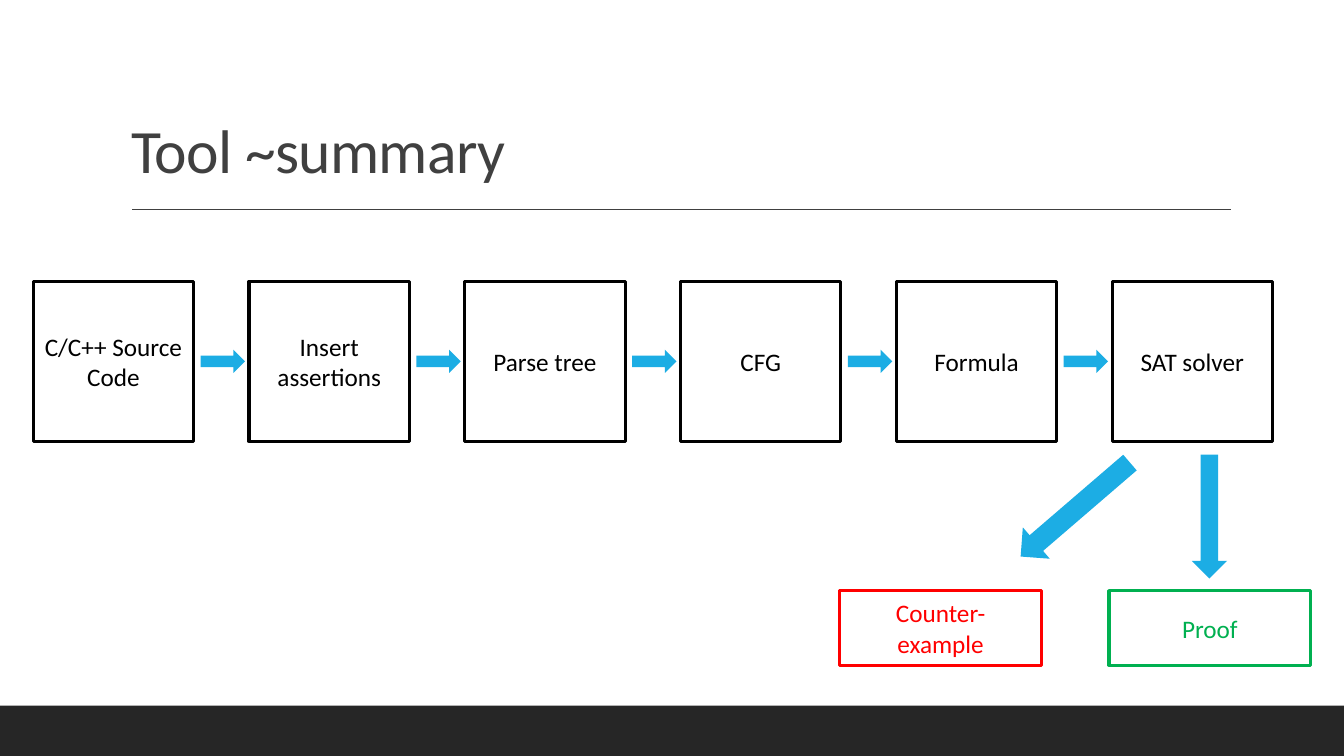
import dataclasses

import pptx
import pptx.dml.color
import pptx.enum.shapes
import pptx.enum.text
import pptx.oxml
import pptx.util
from pptx.util import Inches


@dataclasses.dataclass(frozen=True)
class Theme:
    font: str = "Calibri"
    title_size: float = 44
    body_size: float = 18
    outline_width: float = 2.25
    rule_width: float = 1
    ink: str = "000000"
    title: str = "404040"
    paper: str = "FFFFFF"
    footer: str = "262626"
    arrow: str = "1CADE4"
    failure: str = "FF0000"
    success: str = "00B050"


def color(value):
    return pptx.dml.color.RGBColor.from_string(value)


def write_text(shape, text, *, font, size, ink, align, anchor, line_spacing=1.0, tracking=None):
    frame = shape.text_frame
    frame.word_wrap = True
    frame.auto_size = pptx.enum.text.MSO_AUTO_SIZE.NONE
    frame.vertical_anchor = anchor
    frame.text = text
    for paragraph in frame.paragraphs:
        paragraph.alignment = align
        paragraph.line_spacing = line_spacing
        for run in paragraph.runs:
            run.font.name = font
            run.font.size = pptx.util.Pt(size)
            run.font.color.rgb = color(ink)
            if tracking is not None:
                run.font._element.set("spc", str(round(tracking * 100)))


class SlideBuilder:
    def __init__(self, slide, theme):
        self.slide = slide
        self.theme = theme

    def title(self, text, left, top, width, height):
        shape = self.slide.shapes.title
        shape.left, shape.top = Inches(left), Inches(top)
        shape.width, shape.height = Inches(width), Inches(height)
        write_text(
            shape, text, font=self.theme.font, size=self.theme.title_size,
            ink=self.theme.title, align=pptx.enum.text.PP_ALIGN.LEFT,
            anchor=pptx.enum.text.MSO_ANCHOR.BOTTOM, line_spacing=0.9, tracking=-0.5,
        )

    def rule(self, left, top, right):
        line = self.slide.shapes.add_connector(
            pptx.enum.shapes.MSO_CONNECTOR.STRAIGHT,
            Inches(left), Inches(top), Inches(right), Inches(top),
        )
        line.line.color.rgb = color(self.theme.title)
        line.line.width = pptx.util.Pt(self.theme.rule_width)
        properties = line._element.spPr
        properties.append(pptx.oxml.parse_xml(
            '<a:effectLst xmlns:a="http://schemas.openxmlformats.org/drawingml/2006/main"/>'
        ))

    def solid(self, kind, left, top, width, height, fill):
        shape = self.slide.shapes.add_shape(
            kind, Inches(left), Inches(top), Inches(width), Inches(height)
        )
        shape.shadow.inherit = False
        shape.fill.solid()
        shape.fill.fore_color.rgb = color(fill)
        shape.line.fill.background()
        return shape

    def band(self, left, top, width, height):
        self.solid(pptx.enum.shapes.MSO_SHAPE.RECTANGLE, left, top, width, height, self.theme.footer)

    def box(self, text, left, top, width, height, ink):
        shape = self.solid(
            pptx.enum.shapes.MSO_SHAPE.RECTANGLE, left, top, width, height, self.theme.paper
        )
        shape.line.color.rgb = color(ink)
        shape.line.width = pptx.util.Pt(self.theme.outline_width)
        write_text(
            shape, text, font=self.theme.font, size=self.theme.body_size, ink=ink,
            align=pptx.enum.text.PP_ALIGN.CENTER, anchor=pptx.enum.text.MSO_ANCHOR.MIDDLE,
        )

    def arrow(self, left, top, width, height, rotation=0):
        shape = self.solid(
            pptx.enum.shapes.MSO_SHAPE.RIGHT_ARROW, left, top, width, height, self.theme.arrow
        )
        shape.rotation = rotation


def main():
    presentation = pptx.Presentation()
    presentation.slide_width = Inches(13.33)
    presentation.slide_height = Inches(7.5)
    slide = presentation.slides.add_slide(presentation.slide_layouts[5])
    theme = Theme()
    builder = SlideBuilder(slide, theme)

    builder.band(0, 7, 13.33, 0.5)
    builder.rule(1.31, 2.08, 12.21)
    builder.title("Tool ~summary", 1.2, 0.31, 11, 1.59)

    stages = ["C/C++ Source Code", "Insert assertions", "Parse tree", "CFG", "Formula", "SAT solver"]
    first_left, stage_top, stage_size, pitch = 0.33, 2.79, 1.59, 2.14
    for index, stage in enumerate(stages):
        left = first_left + index * pitch
        builder.box(stage, left, stage_top, stage_size, stage_size, theme.ink)
        if index < len(stages) - 1:
            builder.arrow(left + 1.66, 3.47, 0.44, 0.23)

    builder.arrow(9.95, 4.85, 1.43, 0.41, rotation=139.3)
    builder.arrow(11.38, 4.95, 1.23, 0.35, rotation=90)
    outcomes = [("Counter-\nexample", 8.33, theme.failure), ("Proof", 11, theme.success)]
    for text, left, ink in outcomes:
        builder.box(text, left, 5.86, 2, 0.74, ink)

    presentation.save("out.pptx")


if __name__ == "__main__":
    main()
